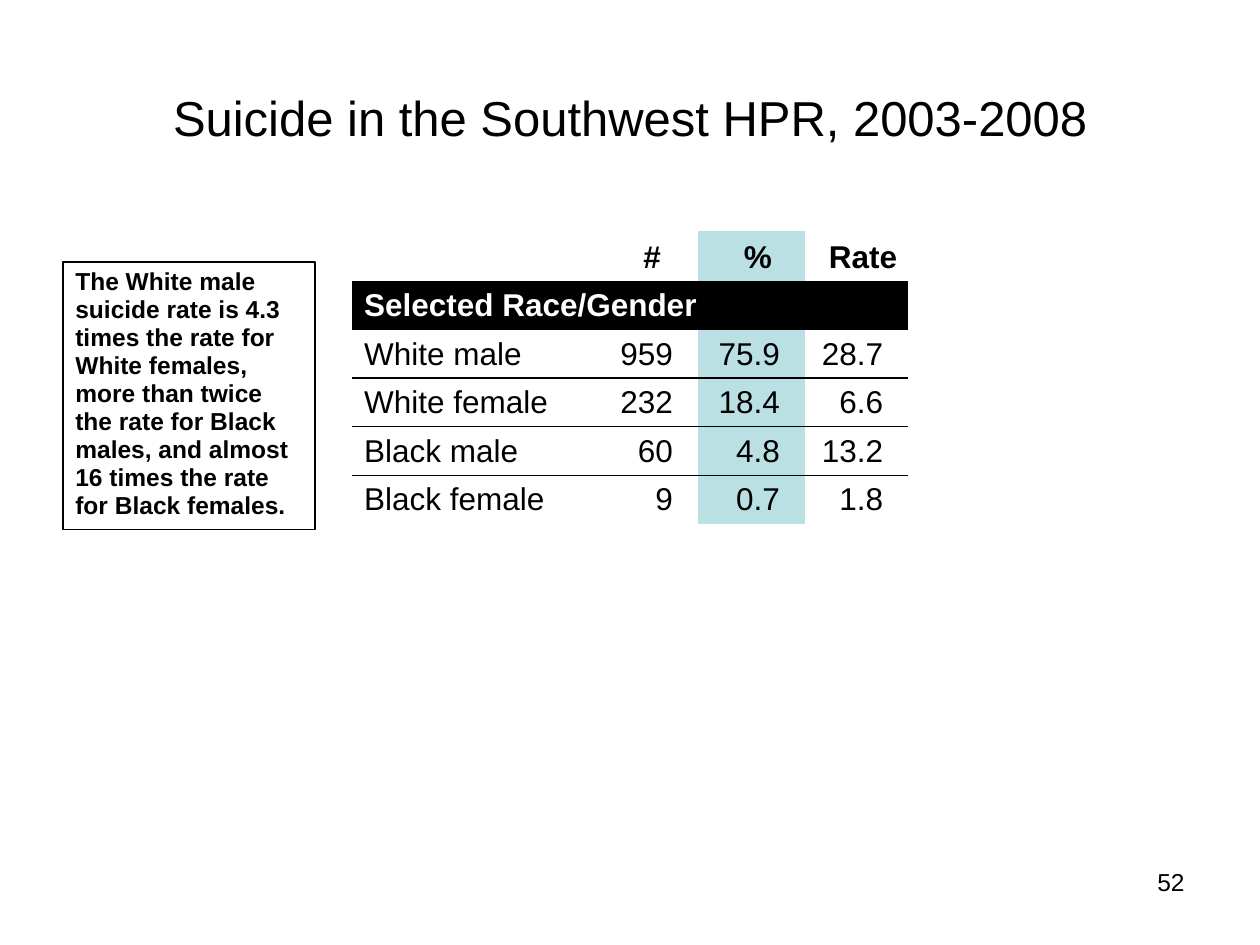
from dataclasses import dataclass

from lxml.etree import SubElement
from pptx import Presentation
from pptx.dml.color import RGBColor as RGB
from pptx.enum.shapes import MSO_SHAPE as Shape
from pptx.enum.text import MSO_ANCHOR as Anchor, PP_ALIGN as Align
from pptx.oxml import parse_xml
from pptx.oxml.ns import nsdecls, qn
from pptx.util import Inches, Pt

NO_STYLE = "{2D5ABB26-0587-4C30-8999-92F81FD0307C}"


@dataclass(frozen=True)
class Theme:
    font: str = "Arial"
    ink: RGB = RGB(0, 0, 0)
    paper: RGB = RGB(255, 255, 255)
    accent: RGB = RGB(0xBB, 0xE0, 0xE3)
    title: int = 28
    table: int = 18
    note: int = 14


class SlideBuilder:
    def __init__(self, prs, theme):
        self.theme = theme
        self.slide = prs.slides.add_slide(prs.slide_layouts[5])

    def set_text(self, tf, text, size, align=Align.LEFT, bold=False, color=None, spacing=None):
        p = tf.paragraphs[0]
        p.text, p.alignment = text, align
        p.font.name, p.font.size, p.font.bold = self.theme.font, Pt(size), bold
        p.font.color.rgb = color or self.theme.ink
        if spacing:
            p.line_spacing, p.space_before = spacing, Pt(size / 10)

    def title(self, text, *box):
        sp = self.slide.shapes.title
        sp.left, sp.top, sp.width, sp.height = map(Inches, box)
        sp.text_frame.vertical_anchor = Anchor.MIDDLE
        self.set_text(sp.text_frame, text, self.theme.title, Align.CENTER)

    def page_number(self, text, *box):
        tf = self.slide.shapes.add_textbox(*map(Inches, box)).text_frame
        tf.word_wrap = True
        self.set_text(tf, text, self.theme.note, Align.RIGHT)

    def callout(self, text, *box):
        sp = self.slide.shapes.add_shape(Shape.RECTANGLE, *map(Inches, box))
        sp.shadow.inherit = False
        sp.fill.background()
        sp.line.color.rgb, sp.line.width = self.theme.ink, Pt(0.75)
        sp.text_frame.word_wrap = True
        sp.text_frame.vertical_anchor = Anchor.TOP
        self.set_text(sp.text_frame, text, self.theme.note, bold=True, spacing=0.95)

    def table(self, left, top, widths, heights):
        frame = self.slide.shapes.add_table(
            len(heights), len(widths), Inches(left), Inches(top),
            Inches(sum(widths)), Inches(sum(heights)))
        table = frame.table
        table.first_row = table.horz_banding = False
        table._tbl.tblPr.find(qn("a:tableStyleId")).text = NO_STYLE
        for column, width in zip(table.columns, widths):
            column.width = Inches(width)
        for row, height in zip(table.rows, heights):
            row.height = Inches(height)
        return table

    def cell(self, cell, text, align, right=0.0, fill=None, **style):
        cell.vertical_anchor = Anchor.BOTTOM
        cell.margin_right = Inches(right)
        self.set_text(cell.text_frame, text, self.theme.table, align, spacing=0.95, **style)
        if fill is not None:
            cell.fill.solid()
            cell.fill.fore_color.rgb = fill

    def rule_below(self, cell):
        line = parse_xml(f'<a:lnB {nsdecls("a")} w="{Pt(1)}"/>')
        fill = SubElement(line, qn("a:solidFill"))
        SubElement(fill, qn("a:srgbClr")).set("val", str(self.theme.ink))
        cell._tc.get_or_add_tcPr().insert(0, line)


def main():
    prs = Presentation()
    prs.slide_width, prs.slide_height = Inches(10), Inches(7.5)
    theme = Theme()
    s = SlideBuilder(prs, theme)

    s.page_number("52", 7.17, 6.83, 2.33, 0.52)
    s.title("Suicide in the Southwest HPR, 2003-2008", 0.5, 0.3, 9, 1.25)

    # Table: headings, a full-width band, then one row per group
    headings = ["", "#", "%", "Rate"]
    groups = [
        ("White male", "959", "75.9", "28.7"),
        ("White female", "232", "18.4", "6.6"),
        ("Black male", "60", "4.8", "13.2"),
        ("Black female", "9", "0.7", "1.8"),
    ]
    column_fills = [None, None, theme.accent, None]
    table = s.table(2.79, 1.83, [1.92, 0.83, 0.85, 0.82], [0.38] + [0.36] * 5)

    for c, (text, fill) in enumerate(zip(headings, column_fills)):
        s.cell(table.cell(0, c), text, Align.CENTER, fill=fill, bold=True)

    band = table.cell(1, 0)
    band.merge(table.cell(1, 3))
    s.cell(band, "Selected Race/Gender", Align.LEFT, fill=theme.ink,
           bold=True, color=theme.paper)

    for r, group in enumerate(groups, start=2):
        for c, (text, fill) in enumerate(zip(group, column_fills)):
            cell = table.cell(r, c)
            s.cell(cell, text, Align.RIGHT if c else Align.LEFT, right=0.2, fill=fill)
            if group != groups[-1]:
                s.rule_below(cell)

    # Key finding beside the table
    s.callout("The White male suicide rate is 4.3 times the rate for White females, "
              "more than twice the rate for Black males, and almost 16 times the rate "
              "for Black females.", 0.5, 2.08, 2, 2.12)

    prs.save("out.pptx")


if __name__ == "__main__":
    main()
